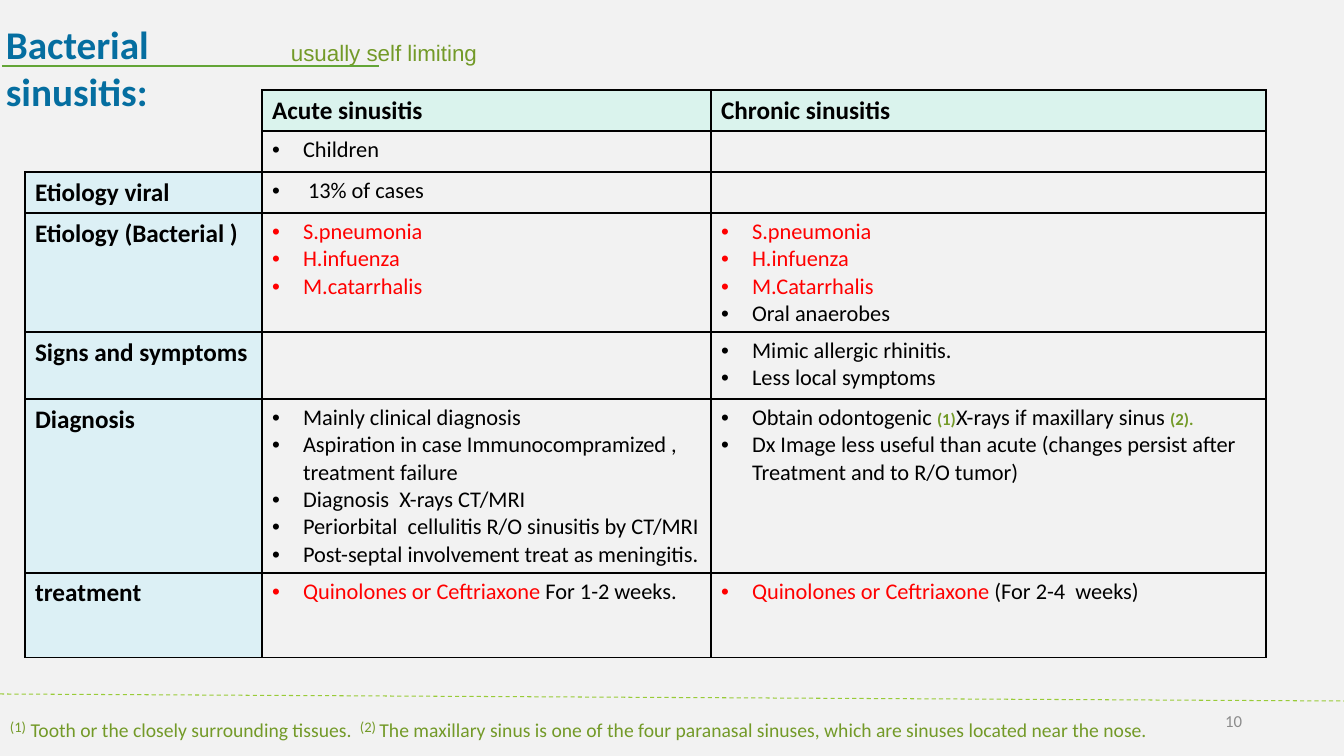
from pptx import Presentation
from pptx.dml.color import RGBColor as RGB
from pptx.enum.dml import MSO_LINE as Dash
from pptx.enum.shapes import MSO_CONNECTOR as Conn
from pptx.enum.text import MSO_ANCHOR as Anchor, PP_ALIGN as Align
from pptx.oxml import parse_xml
from pptx.oxml.ns import nsdecls
from pptx.util import Pt
from dataclasses import dataclass, field


@dataclass
class Theme:
    back: str = "F2F2F2"
    edge: str = "000000"
    top: str = "DAF3ED"
    side: str = "DCF0F5"
    dash: str = "99CB38"
    rule: str = "63A537"
    # style: font, size, colour, bold, baseline
    styles: dict = field(default_factory=lambda: {
        "title": ("Calibri", 28, "056EA0", True, 0),
        "sub": ("Arial", 16, "739A28", False, 0),
        "head": ("Calibri", 18, "000000", True, 0),
        "body": ("Calibri", 16, "000000", False, 0),
        "red": ("Calibri", 16, "FF0000", False, 0),
        "ref": ("Calibri", 12, "739A28", True, 0),
        "mark": ("Calibri", 18, "739A28", False, 20000),
        "note": ("Calibri", 14, "739A28", False, 0),
        "page": ("Calibri", 12, "8C8C8C", False, 0),
    })


theme = Theme()

# Content: a paragraph is a list of (text, style) runs
def plain(*lines):
    return [[(line, "body")] for line in lines]


def red(*lines):
    return [[(line, "red")] for line in lines]


heads = ["Acute sinusitis", "Chronic sinusitis"]
rows = [
    ("", plain("Children"), []),
    ("Etiology viral", plain(" 13% of cases"), []),
    ("Etiology (Bacterial )",
     red("S.pneumonia", "H.infuenza", "M.catarrhalis"),
     red("S.pneumonia", "H.infuenza", "M.Catarrhalis") + plain("Oral anaerobes")),
    ("Signs and symptoms", [],
     plain("Mimic allergic rhinitis.", "Less local symptoms")),
    ("Diagnosis",
     plain("Mainly clinical diagnosis",
           "Aspiration in case Immunocompramized , treatment failure",
           "Diagnosis  X-rays CT/MRI",
           "Periorbital  cellulitis R/O sinusitis by CT/MRI",
           "Post-septal involvement treat as meningitis."),
     [[("Obtain odontogenic ", "body"), ("(1)", "ref"),
       ("X-rays if maxillary sinus ", "body"), ("(2).", "ref")]]
     + plain("Dx Image less useful than acute (changes persist after "
             "Treatment and to R/O tumor)")),
    ("treatment",
     [[("Quinolones or Ceftriaxone ", "red"), ("For 1-2 weeks.", "body")]],
     [[("Quinolones or Ceftriaxone ", "red"), ("(For 2-4  weeks)", "body")]]),
]
# Text boxes: left, top, width, height, runs
boxes = [
    (350, 707, 1010, 34, [
        ("(2) ", "mark"),
        ("The maxillary sinus is one of the four paranasal sinuses, "
         "which are sinuses located near the nose.", "note")]),
    (0, 707, 397, 34, [
        ("(1)", "mark"), (" Tooth or the closely surrounding tissues.", "note")]),
    (-4, 15, 200, 106, [("Bacterial sinusitis:", "title")]),
    (281, 34, 242, 37, [("usually self limiting", "sub")]),
]
page = (950, 701, 302, 40, [("10", "page")])
wide = [237, 449, 555]
high = [41, 41, 41, 119, 67, 174, 85]
left, top = 25, 90
indent = 31


def px(n):
    return round(n * 914400 / 100.8)


def write(par, runs):
    for text, name in runs:
        run = par.add_run()
        run.text = text
        font = run.font
        font.name, size, color, font.bold, base = theme.styles[name]
        font.size = Pt(size)
        font.color.rgb = RGB.from_string(color)
        if base:
            run._r.get_or_add_rPr().set("baseline", str(base))


def bullet(par):
    props = par._p.get_or_add_pPr()
    props.set("marL", str(px(indent)))
    props.set("indent", str(-px(indent)))
    props.append(parse_xml(f'<a:buFont {nsdecls("a")} typeface="Arial"/>'))
    props.append(parse_xml(f'<a:buChar {nsdecls("a")} char="•"/>'))


def fill(cell, color):
    cell.fill.solid()
    cell.fill.fore_color.rgb = RGB.from_string(color)


def border(cell, sides="LRTB"):
    props = cell._tc.get_or_add_tcPr()
    ink = f'<a:solidFill><a:srgbClr val="{theme.edge}"/></a:solidFill>'
    for i, side in enumerate("LRTB"):
        paint = ink if side in sides else "<a:noFill/>"
        props.insert(i, parse_xml(
            f'<a:ln{side} {nsdecls("a")} w="12700">{paint}</a:ln{side}>'))


def add_text(slide, x, y, w, h, runs):
    box = slide.shapes.add_textbox(px(x), px(y), px(w), px(h))
    box.text_frame.word_wrap = True
    write(box.text_frame.paragraphs[0], runs)
    return box.text_frame


def add_line(slide, x1, y1, x2, y2, color, width):
    line = slide.shapes.add_connector(
        Conn.STRAIGHT, px(x1), px(y1), px(x2), px(y2))
    line.line.color.rgb = RGB.from_string(color)
    line.line.width = Pt(width)
    line._element.spPr.append(parse_xml(f'<a:effectLst {nsdecls("a")}/>'))
    return line


def add_grid(slide):
    table = slide.shapes.add_table(
        len(high), len(wide), px(left), px(top), px(sum(wide)), px(sum(high))).table
    table.first_row = table.horz_banding = False
    for col, w in zip(table.columns, wide):
        col.width = px(w)
    for row, h in zip(table.rows, high):
        row.height = px(h)
    # Blank corner above the row labels
    table.cell(0, 0).merge(table.cell(1, 0))
    for r in range(len(high)):
        for c in range(len(wide)):
            cell = table.cell(r, c)
            corner = c == 0 and r < 2
            cell.fill.background()
            border(cell, "RB" if corner else "LRTB")
            if corner:
                continue
            if r == 0 or c == 0:
                label = heads[c - 1] if r == 0 else rows[r - 1][0]
                fill(cell, theme.top if r == 0 else theme.side)
                write(cell.text_frame.paragraphs[0], [(label, "head")])
                continue
            frame = cell.text_frame
            for i, runs in enumerate(rows[r - 1][c]):
                par = frame.add_paragraph() if i else frame.paragraphs[0]
                bullet(par)
                write(par, runs)


def main():
    deck = Presentation()
    deck.slide_width, deck.slide_height = px(1344), px(756)
    slide = deck.slides.add_slide(deck.slide_layouts[6])
    slide.background.fill.solid()
    slide.background.fill.fore_color.rgb = RGB.from_string(theme.back)

    # Footer rule and page number
    rule = add_line(slide, 0, 694, 1344, 701, theme.dash, 0.75)
    rule.line.dash_style = Dash.DASH
    frame = add_text(slide, *page)
    frame.vertical_anchor = Anchor.MIDDLE
    frame.paragraphs[0].alignment = Align.RIGHT

    # Comparison table, then notes and title
    add_grid(slide)
    for box in boxes:
        add_text(slide, *box)
    add_line(slide, 2, 66, 379, 66, theme.rule, 1.5)
    deck.save("out.pptx")


if __name__ == "__main__":
    main()
